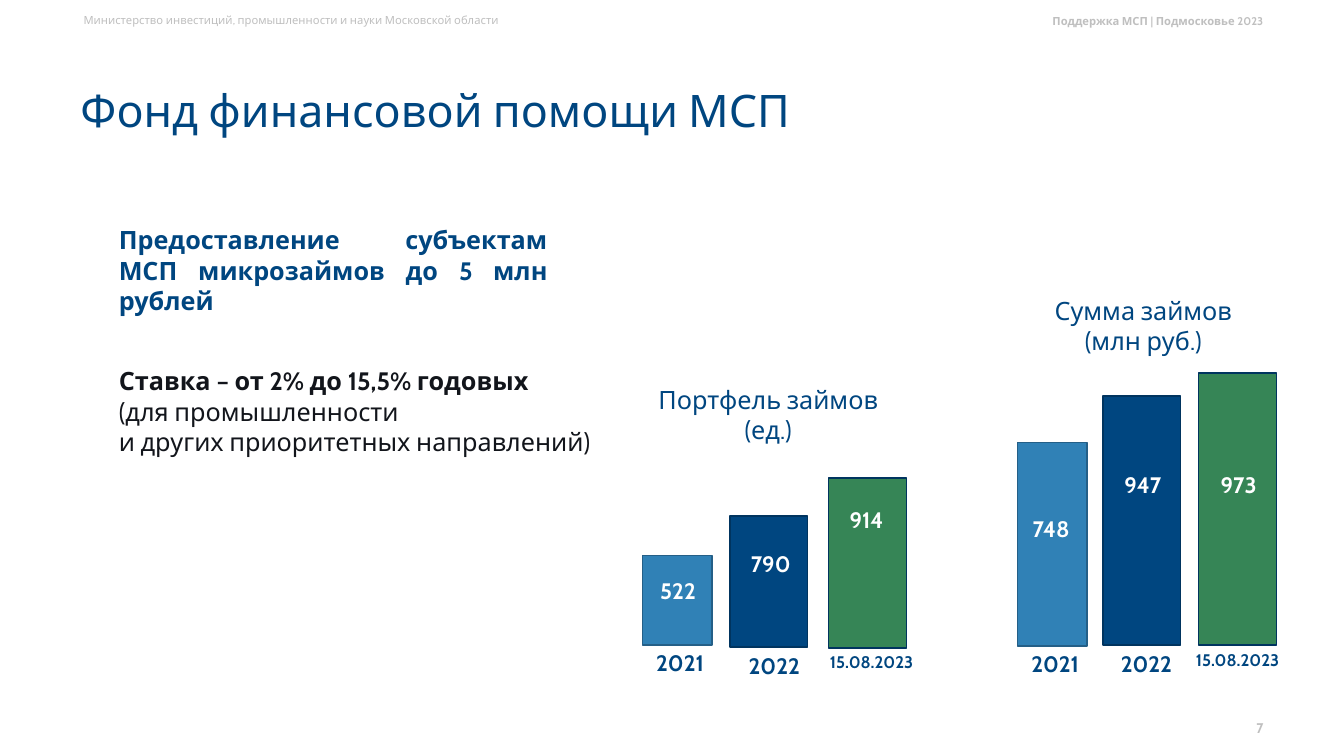
import pptx
import pptx.util
import pptx.dml.color
import pptx.enum.shapes
import pptx.enum.text

PX = 9144
NAVY, SKY, GREEN = "004680", "3081B6", "368556"
EDGE, RIM = "00345F", "245F87"
INK, GREY, WHITE = "12151B", "BFBFBF", "FFFFFF"
ALIGN = pptx.enum.text.PP_ALIGN
ANCHOR = pptx.enum.text.MSO_ANCHOR


def color(code):
    return pptx.dml.color.RGBColor.from_string(code)


class Deck:
    """Holds the font and the current slide, and draws elements in px."""

    def __init__(self, font):
        self.font = font
        self.file = pptx.Presentation()
        self.file.slide_width = 1333 * PX
        self.file.slide_height = 750 * PX
        self.slide = self.file.slides.add_slide(self.file.slide_layouts[6])

    def text(self, box, lines, size, tint, bold=False, align=ALIGN.LEFT,
             anchor=ANCHOR.TOP, space=None):
        shape = self.slide.shapes.add_textbox(*(n * PX for n in box))
        frame = shape.text_frame
        frame.word_wrap = True
        frame.vertical_anchor = anchor
        for i, line in enumerate(lines):
            par = frame.paragraphs[0] if i == 0 else frame.add_paragraph()
            par.text = line
            par.alignment = align
            par.line_spacing = space
            par.font.name = self.font
            par.font.size = pptx.util.Pt(size)
            par.font.bold = bold
            par.font.color.rgb = color(tint)
        return frame

    def bar(self, box, fill, line):
        kind = pptx.enum.shapes.MSO_SHAPE.RECTANGLE
        shape = self.slide.shapes.add_shape(kind, *(n * PX for n in box))
        shape.shadow.inherit = False
        shape.fill.solid()
        shape.fill.fore_color.rgb = color(fill)
        shape.line.color.rgb = color(line)
        shape.line.width = pptx.util.Pt(1)

    def column(self, box, style, value, spot, year, foot):
        fill, line, wide, size = style
        self.bar(box, fill, line)
        self.text((*spot, 77, 37), [value], 16, WHITE, True, ALIGN.CENTER)
        self.text((*foot, wide, 37), [year], size, NAVY, True, ALIGN.CENTER)


def main():
    deck = Deck("Cabin")
    deck.text((73, 8, 565, 24),
              ["Министерство инвестиций, промышленности и науки Московской области"],
              8, GREY)
    deck.text((813, 12, 450, 18), ["Поддержка МСП | Подмосковье 2023"],
              8, GREY, True, ALIGN.RIGHT, ANCHOR.MIDDLE)
    deck.text((963, 710, 300, 25), ["7"], 10, GREY, True, ALIGN.RIGHT, ANCHOR.MIDDLE)
    deck.text((70, 40, 1194, 145), ["Фонд финансовой помощи МСП"],
              32, NAVY, anchor=ANCHOR.MIDDLE, space=0.9)

    deck.text((108, 218, 445, 49),
              ["Предоставление субъектам МСП микрозаймов до 5 млн рублей"],
              18, NAVY, True, ALIGN.JUSTIFY)
    rate = deck.text((108, 358, 539, 116),
                     ["Ставка – от 2% до 15,5% годовых",
                      "(для промышленности\vи других приоритетных направлений)"],
                     18, INK, True)
    rate.paragraphs[1].font.bold = False

    deck.text((626, 376, 272, 71), ["Портфель займов", "(ед.)"],
              18, NAVY, align=ALIGN.CENTER)
    deck.text((1032, 288, 204, 79), ["Сумма займов (млн руб.)"],
              18, NAVY, align=ALIGN.CENTER)

    first = (SKY, RIM, 77, 16)
    second = (NAVY, EDGE, 80, 16)
    third = (GREEN, EDGE, 113, 12)
    columns = [
        ((637, 551, 69, 89), first, "522", (634, 568), "2021", (636, 639)),
        ((724, 512, 77, 130), second, "790", (726, 541), "2022", (728, 642)),
        ((822, 474, 77, 169), third, "914", (821, 497), "15.08.2023", (808, 642)),
        ((1009, 439, 69, 202), first, "748", (1004, 506), "2021", (1008, 640)),
        ((1094, 393, 77, 247), second, "947", (1095, 462), "2022", (1097, 640)),
        ((1189, 370, 77, 270), third, "973", (1190, 462), "15.08.2023", (1171, 640)),
    ]
    for column in columns:
        deck.column(*column)
    deck.file.save("out.pptx")


if __name__ == "__main__":
    main()
